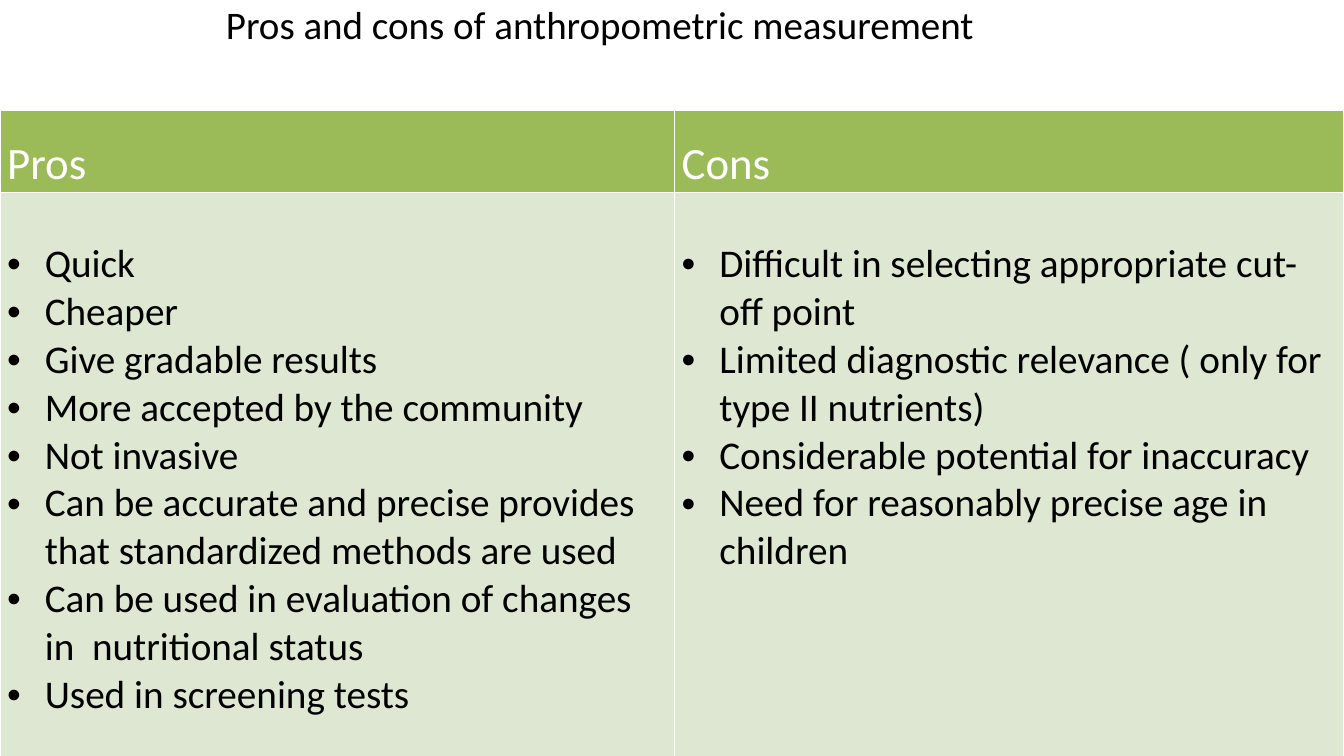
import pptx
import pptx.util
import pptx.dml.color
import pptx.enum.text
import pptx.oxml
import pptx.oxml.ns
from pptx.util import Cm

WHITE, BLACK, GREEN, PALE = "FFFFFF", "000000", "9BBB59", "DEE7D1"
NS = pptx.oxml.ns.nsdecls("a")
INSET = Cm(0.18)
HANG = Cm(0.95)

PROS = [
    "Quick",
    "Cheaper",
    "Give gradable results",
    "More accepted by the community",
    "Not invasive",
    "Can be accurate and precise provides that standardized methods are used",
    "Can be used in evaluation of changes in  nutritional status",
    "Used in screening tests",
]
CONS = [
    "Difficult in selecting appropriate cut-off point",
    "Limited diagnostic relevance ( only for type II nutrients)",
    "Considerable potential for inaccuracy",
    "Need for reasonably precise age in children",
]


def color(code):
    return pptx.dml.color.RGBColor.from_string(code)


def write(par, text, size=28, ink=BLACK, space=1.0, bullet=False):
    par.alignment = pptx.enum.text.PP_ALIGN.LEFT
    par.line_spacing = space
    run = par.add_run()
    run.text = text
    run.font.name = "Calibri"
    run.font.size = pptx.util.Pt(size)
    run.font.bold = False
    run.font.color.rgb = color(ink)
    if bullet:
        props = par._p.get_or_add_pPr()
        props.set("marL", str(HANG))
        props.set("indent", str(-HANG))
        for tag in ('buFont typeface="Arial"', 'buChar char="•"'):
            props.append(pptx.oxml.parse_xml(f"<a:{tag} {NS}/>"))


def paint(cell, fill, top=0):
    cell.margin_left = cell.margin_right = INSET
    cell.margin_top, cell.margin_bottom = top, 0
    cell.fill.solid()
    cell.fill.fore_color.rgb = color(fill)
    # Borders come before the fill in the cell properties
    props = cell._tc.get_or_add_tcPr()
    for spot, side in enumerate("LRTB"):
        props.insert(spot, pptx.oxml.parse_xml(
            f'<a:ln{side} {NS} w="12700"><a:solidFill><a:srgbClr val="{WHITE}"/>'
            f"</a:solidFill></a:ln{side}>"))


def head(slide, left, top, width, height):
    title = slide.shapes.title
    title.left, title.top, title.width, title.height = left, top, width, height
    frame = title.text_frame
    frame.auto_size = pptx.enum.text.MSO_AUTO_SIZE.NONE
    frame.vertical_anchor = pptx.enum.text.MSO_ANCHOR.TOP
    frame.margin_top = frame.margin_bottom = 0
    write(frame.paragraphs[0], "Pros and cons of anthropometric measurement", size=27.9)


def grid(slide, left, top, width, height):
    table = slide.shapes.add_table(2, 2, left, top, width, height).table
    table.first_row = table.horz_banding = False
    table.columns[0].width = Cm(17)
    table.columns[1].width = width - Cm(17)
    table.rows[0].height = Cm(1.93)
    table.rows[1].height = height - Cm(1.93)
    for col, (name, items) in enumerate((("Pros", PROS), ("Cons", CONS))):
        # Heading cell
        cell = table.cell(0, col)
        paint(cell, GREEN)
        write(cell.text_frame.paragraphs[0], name, size=32, ink=WHITE, space=1.5)
        # List cell
        cell = table.cell(1, col)
        paint(cell, PALE, top=Cm(1.21))
        frame = cell.text_frame
        for row, item in enumerate(items):
            par = frame.add_paragraph() if row else frame.paragraphs[0]
            write(par, item, bullet=True)


def main():
    deck = pptx.Presentation()
    deck.slide_width, deck.slide_height = Cm(33.87), Cm(19.05)
    slide = deck.slides.add_slide(deck.slide_layouts[5])
    head(slide, Cm(5.44), 0, Cm(22.86), Cm(1.65))
    top = Cm(2.77)
    grid(slide, 0, top, deck.slide_width, deck.slide_height - top)
    deck.save("out.pptx")


if __name__ == "__main__":
    main()
